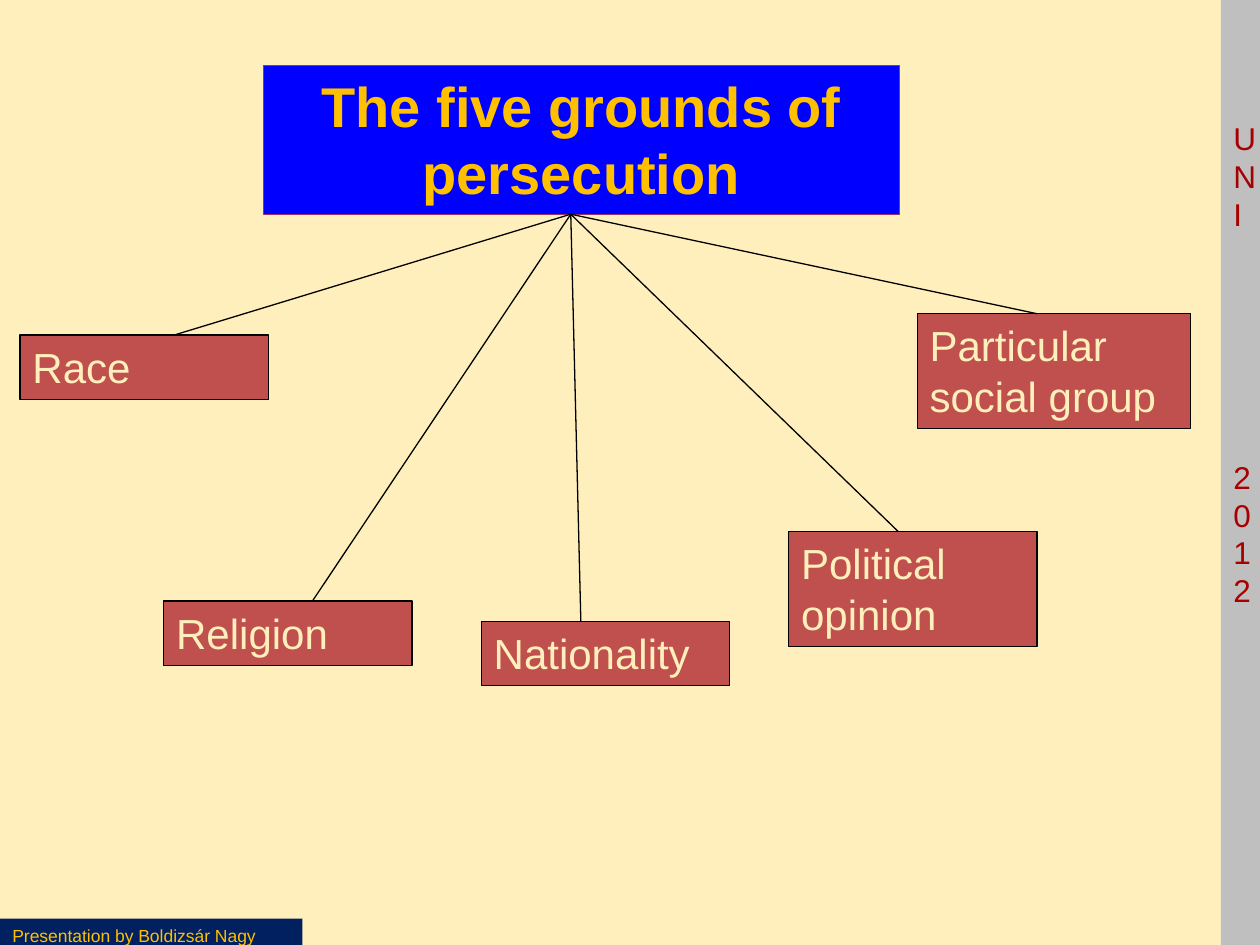
from pptx import Presentation
from pptx import util as u
from pptx.dml.color import RGBColor
from pptx.enum import shapes, text
from pptx.oxml.ns import qn
from lxml import etree

COLORS = {
    "background": "FFEFBD", "sidebar": "BFBFBF", "sidebar_text": "A80000",
    "footer": "002060", "gold": "FFC000", "title": "0000FF",
    "title_line": "993366", "ground": "C0504D", "black": "000000",
}


def color(name):
    return RGBColor.from_string(COLORS[name])


def add_box(place, fill, lines, size, font_color, line=None, bold=False,
            align=text.PP_ALIGN.LEFT):
    """Add a filled rectangle with one paragraph for each entry in lines."""
    shape = slide.shapes.add_shape(
        shapes.MSO_SHAPE.RECTANGLE, *[u.Inches(value) for value in place])
    shape.shadow.inherit = False
    shape.fill.solid()
    shape.fill.fore_color.rgb = color(fill)
    if line:
        shape.line.color.rgb = color(line)
        shape.line.width = u.Pt(0.75)
    else:
        shape.line.fill.background()
    frame = shape.text_frame
    frame.word_wrap = True
    frame.vertical_anchor = text.MSO_ANCHOR.TOP
    for index, wording in enumerate(lines):
        paragraph = frame.add_paragraph() if index else frame.paragraphs[0]
        paragraph.alignment = align
        run = paragraph.add_run()
        run.text = wording
        run.font.name = "Arial"
        run.font.size = u.Pt(size)
        run.font.bold = bold
        run.font.color.rgb = color(font_color)
    return shape


presentation = Presentation()
presentation.slide_width = u.Inches(10)
presentation.slide_height = u.Inches(7.5)
slide = presentation.slides.add_slide(presentation.slide_layouts[6])
slide.background.fill.solid()
slide.background.fill.fore_color.rgb = color("background")

# The sidebar is so narrow that every letter wraps to its own line
sidebar = add_box((9.69, 0, 0.31, 7.5), "sidebar", ["UNI", "20", "12"],
                  18, "sidebar_text")
sidebar.text_frame.margin_top = u.Inches(0.95)
for paragraph in sidebar.text_frame.paragraphs:
    paragraph.line_spacing = u.Pt(21.5)
sidebar.text_frame.paragraphs[1].space_before = u.Pt(6 * 21.5)

add_box((0, 7.29, 2.4, 0.27), "footer", ["Presentation by Boldizsár Nagy"],
        10, "gold")
add_box((2.09, 0.52, 5.05, 1.18), "title", ["The five grounds of persecution"],
        32, "gold", line="title_line", bold=True, align=text.PP_ALIGN.CENTER)

# Wording, left, top, width, height, x where the line meets the top edge
grounds = [
    ("Race", 0.16, 2.66, 1.97, 0.51, 1.38),
    ("Religion", 1.3, 4.77, 1.97, 0.51, 2.48),
    ("Nationality", 3.82, 4.93, 1.97, 0.51, 4.61),
    ("Political opinion", 6.26, 4.22, 1.97, 0.91, 7.13),
    ("Particular social group", 7.28, 2.49, 2.17, 0.91, 8.23),
]
for wording, left, top, width, height, line_x in grounds:
    add_box((left, top, width, height), "ground", [wording], 24, "background",
            line="black")
    connector = slide.shapes.add_connector(
        shapes.MSO_CONNECTOR.STRAIGHT, u.Inches(4.53), u.Inches(1.7),
        u.Inches(line_x), u.Inches(top))
    connector.line.color.rgb = color("black")
    connector.line.width = u.Pt(0.75)
    etree.SubElement(connector.element.spPr, qn("a:effectLst"))

presentation.save("out.pptx")
